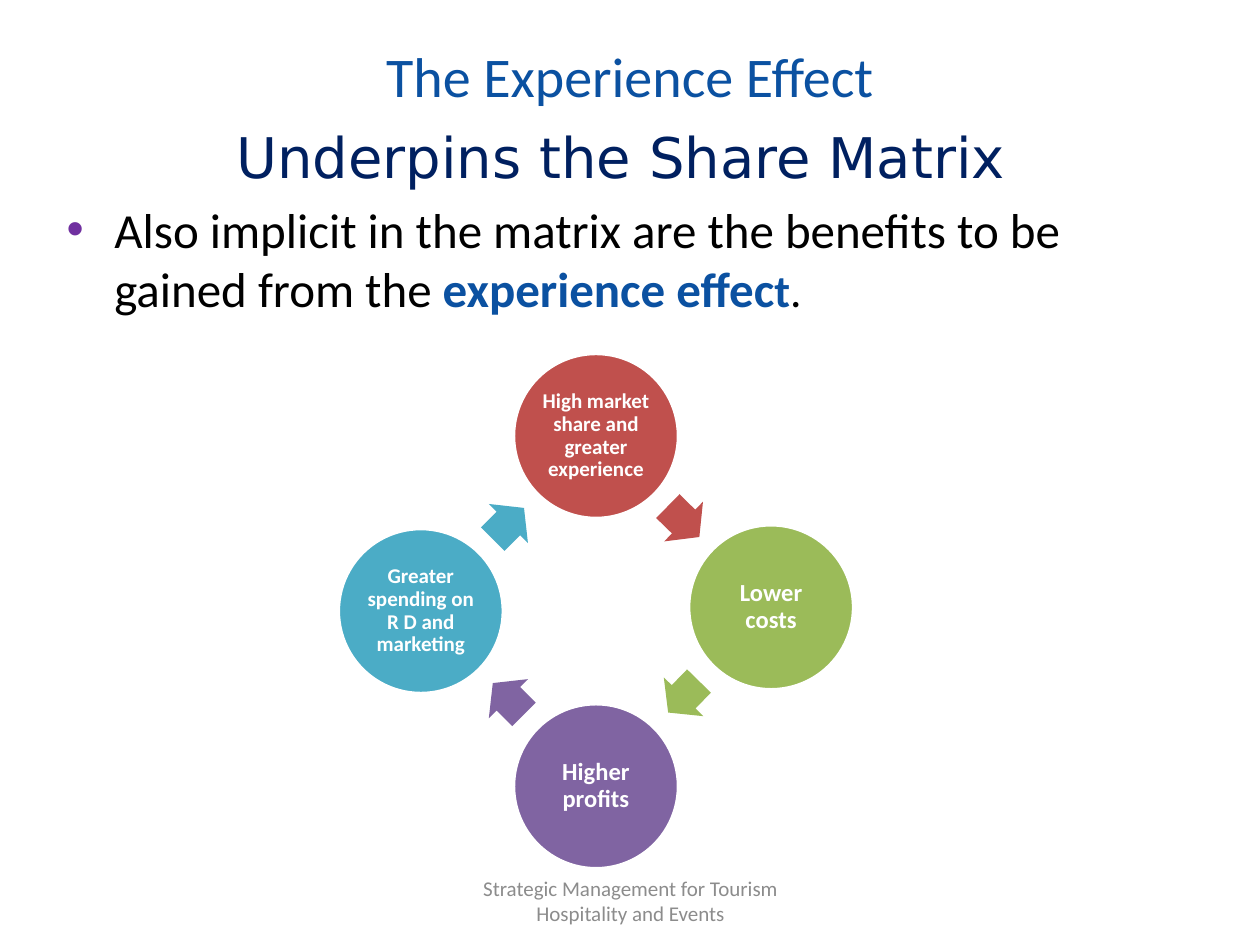
from math import atan2, degrees

from lxml.etree import SubElement
from pptx import Presentation
from pptx.dml.color import RGBColor
from pptx.enum.shapes import MSO_SHAPE
from pptx.enum.text import MSO_ANCHOR, PP_ALIGN
from pptx.oxml.ns import qn
from pptx.util import Inches, Pt

COLORS = {
    "title": "0B51A1", "subtitle": "002060", "bullet": "7030A0",
    "text": "000000", "footer": "8C8C8C", "white": "FFFFFF",
    "red": "C0504D", "green": "9BBB59", "purple": "8064A2", "blue": "4BACC6",
}
TITLE = "The Experience Effect"
SUBTITLE = "Underpins the Share Matrix"
# text, size, colour, bold
BODY_RUNS = [
    ("Also implicit in the matrix are the benefits to be gained from the ", 28, "text", False),
    ("experience effec", 28, "title", True),
    ("t", 26, "title", True),
    (".", 26, "text", False),
]
FOOTER = "Strategic Management for Tourism Hospitality and Events"
# text, size, colour, centre of the circle
STEPS = [
    ("High market share and greater experience", 12, "red", (4.73, 3.46)),
    ("Lower costs", 14, "green", (6.12, 4.82)),
    ("Higher profits", 14, "purple", (4.73, 6.24)),
    ("Greater spending on R D and marketing", 12, "blue", (3.34, 4.85)),
]
CIRCLE_SIZE = 1.31
ARROW_LENGTH, ARROW_WIDTH = 0.35, 0.44


def rgb(name):
    return RGBColor.from_string(COLORS[name])


def style_font(font, size, color, name="Calibri", bold=False):
    font.name = name
    font.size = Pt(size)
    font.bold = bold
    font.color.rgb = rgb(color)


def add_text_frame(slide, left, top, width, height):
    box = slide.shapes.add_textbox(Inches(left), Inches(top), Inches(width), Inches(height))
    box.text_frame.word_wrap = True
    return box.text_frame


def add_centred_shape(slide, preset, centre, width, height, color):
    x, y = centre
    shape = slide.shapes.add_shape(
        preset, Inches(x - width / 2), Inches(y - height / 2), Inches(width), Inches(height))
    shape.shadow.inherit = False
    shape.fill.solid()
    shape.fill.fore_color.rgb = rgb(color)
    shape.line.fill.background()
    return shape


def add_bullet(paragraph, color):
    properties = paragraph._p.get_or_add_pPr()
    properties.set("marL", str(Inches(0.38)))
    properties.set("indent", str(-Inches(0.38)))
    bullet_color = SubElement(properties, qn("a:buClr"))
    SubElement(bullet_color, qn("a:srgbClr"), val=COLORS[color])
    SubElement(properties, qn("a:buFont"), typeface="Arial")
    SubElement(properties, qn("a:buChar"), char="•")


def add_title(slide):
    title = slide.shapes.title
    title.left, title.top = Inches(0.5), Inches(0.13)
    title.width, title.height = Inches(9), Inches(0.94)
    title.text_frame.text = TITLE
    title.text_frame.vertical_anchor = MSO_ANCHOR.MIDDLE
    paragraph = title.text_frame.paragraphs[0]
    paragraph.alignment = PP_ALIGN.CENTER
    style_font(paragraph.font, 32, "title")


def add_body(slide):
    frame = add_text_frame(slide, 0.43, 0.92, 9, 5.19)
    subtitle = frame.paragraphs[0]
    subtitle.text = SUBTITLE
    subtitle.alignment = PP_ALIGN.CENTER
    subtitle.space_before = Pt(6.4)
    style_font(subtitle.font, 32, "subtitle", name="DejaVu Sans")

    paragraph = frame.add_paragraph()
    paragraph.space_before = Pt(5.6)
    add_bullet(paragraph, "bullet")
    for text, size, color, bold in BODY_RUNS:
        run = paragraph.add_run()
        run.text = text
        style_font(run.font, size, color, bold=bold)


def add_footer(slide):
    frame = add_text_frame(slide, 3.42, 6.95, 3.17, 0.4)
    frame.vertical_anchor = MSO_ANCHOR.MIDDLE
    paragraph = frame.paragraphs[0]
    paragraph.text = FOOTER
    paragraph.alignment = PP_ALIGN.CENTER
    style_font(paragraph.font, 12, "footer")


def add_step(slide, text, size, color, centre):
    circle = add_centred_shape(slide, MSO_SHAPE.OVAL, centre, CIRCLE_SIZE, CIRCLE_SIZE, color)
    circle.line.color.rgb = rgb("white")
    circle.line.width = Pt(2)
    frame = circle.text_frame
    frame.word_wrap = True
    frame.vertical_anchor = MSO_ANCHOR.MIDDLE
    frame.margin_left = frame.margin_right = Inches(0.02)
    frame.margin_top = frame.margin_bottom = Inches(0.02)
    paragraph = frame.paragraphs[0]
    paragraph.text = text
    paragraph.alignment = PP_ALIGN.CENTER
    paragraph.line_spacing = 0.9
    style_font(paragraph.font, size, "white", bold=True)


def add_cycle_arrow(slide, start, end, color):
    """Put an arrow halfway between two circle centres, pointing at the second."""
    middle = ((start[0] + end[0]) / 2, (start[1] + end[1]) / 2)
    arrow = add_centred_shape(
        slide, MSO_SHAPE.RIGHT_ARROW, middle, ARROW_LENGTH, ARROW_WIDTH, color)
    arrow.adjustments[0] = 0.6
    arrow.adjustments[1] = 0.5
    arrow.rotation = degrees(atan2(end[1] - start[1], end[0] - start[0])) % 360


def main():
    presentation = Presentation()
    presentation.slide_width, presentation.slide_height = Inches(10), Inches(7.5)
    slide = presentation.slides.add_slide(presentation.slide_layouts[5])
    add_title(slide)
    add_body(slide)
    add_footer(slide)
    for index, (text, size, color, centre) in enumerate(STEPS):
        next_centre = STEPS[(index + 1) % len(STEPS)][3]
        add_step(slide, text, size, color, centre)
        add_cycle_arrow(slide, centre, next_centre, color)
    presentation.save("out.pptx")


if __name__ == "__main__":
    main()
